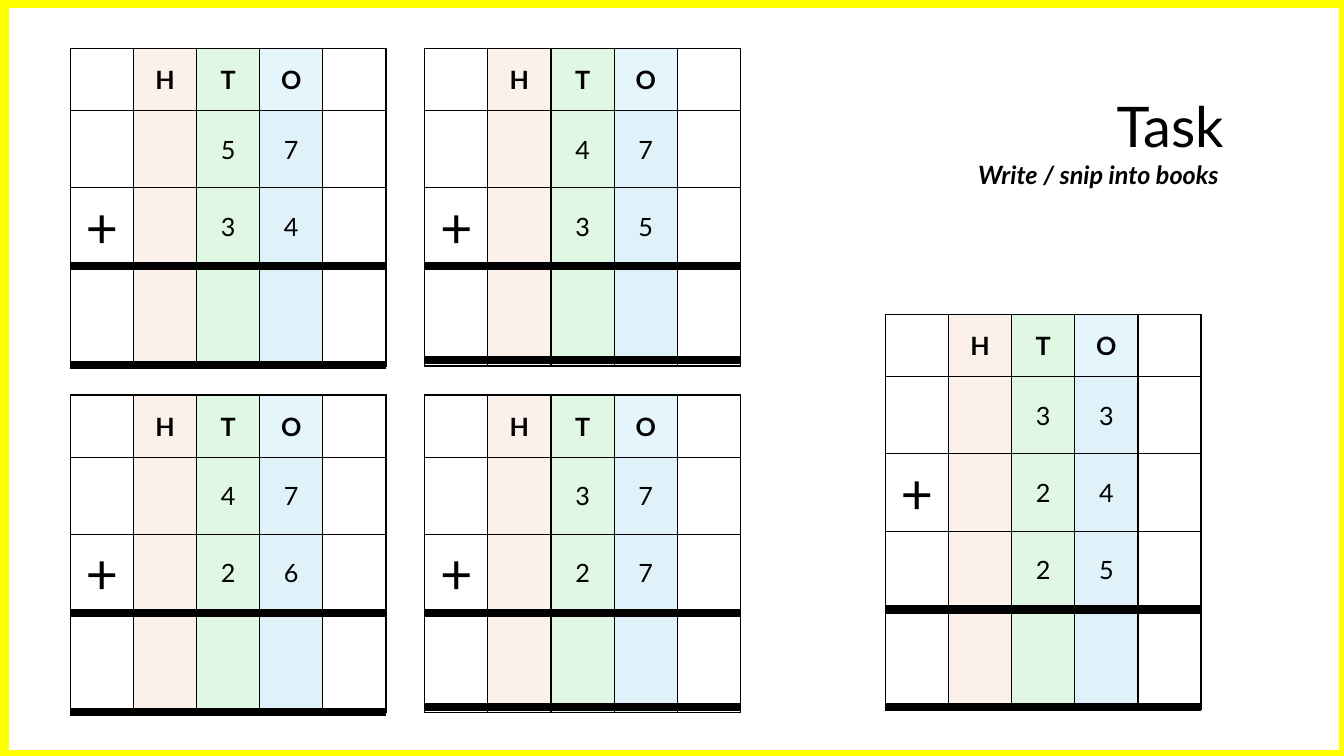
from dataclasses import dataclass

from lxml.etree import SubElement
from pptx import Presentation
from pptx.dml.color import RGBColor
from pptx.enum.shapes import MSO_CONNECTOR, MSO_SHAPE
from pptx.enum.text import MSO_ANCHOR, MSO_AUTO_SIZE, PP_ALIGN
from pptx.oxml.ns import qn
from pptx.util import Pt


@dataclass(frozen=True)
class Theme:
    """Colours, font and type sizes of the slide."""
    font: str = "Lato"
    ink: str = "000000"
    frame: str = "FFFF00"
    hundreds: str = "FBE3D6"
    tens: str = "C2F1C8"
    ones_header: str = "CAEEFB"
    ones: str = "C1E5F5"
    tint_alpha: int = 50000
    large: int = 40
    body: int = 18


THEME = Theme()
COLUMN_WIDTH = 45.1
HEADER_HEIGHT, FIRST_HEIGHT, ADDEND_HEIGHT, ANSWER_HEIGHT = 44.6, 55, 55.2, 72
RULE_DROP = 0.8

SUMS = [
    (50.2, 34.6, ["57", "34"], 70.6),
    (303.4, 34.6, ["47", "35"], 67),
    (632.4, 224.6, ["33", "24", "25"], 69.8),
    (50.2, 282.2, ["47", "26"], 70.6),
    (303.4, 282.2, ["37", "27"], 67.4),
]


def write(frame, text, size=THEME.body, bold=False, italic=False, align=PP_ALIGN.CENTER):
    """Put one formatted line of text into a text frame."""
    line = frame.paragraphs[0]
    line.alignment = align
    run = line.add_run()
    run.text = text
    run.font.name = THEME.font
    run.font.size = Pt(size)
    run.font.bold = bold
    run.font.italic = italic
    run.font.color.rgb = RGBColor.from_string(THEME.ink)


def add_frame(slide, left, top, width, height):
    """Draw the yellow frame around the slide."""
    frame = slide.shapes.add_shape(
        MSO_SHAPE.RECTANGLE, Pt(left), Pt(top), Pt(width), Pt(height))
    frame.shadow.inherit = False
    frame.fill.background()
    frame.line.color.rgb = RGBColor.from_string(THEME.frame)
    frame.line.width = Pt(10)


def add_heading(slide, left, top, width, height, text, **style):
    """Place one right-aligned heading line."""
    heading = slide.shapes.add_textbox(Pt(left), Pt(top), Pt(width), Pt(height))
    heading.text_frame.word_wrap = False
    heading.text_frame.auto_size = MSO_AUTO_SIZE.SHAPE_TO_FIT_TEXT
    write(heading.text_frame, text, align=PP_ALIGN.RIGHT, **style)


def style_cell(cell, tint):
    """Give a cell thin borders and an optional translucent tint."""
    properties = cell._tc.get_or_add_tcPr()
    for side in ("lnL", "lnR", "lnT", "lnB"):
        border = SubElement(properties, qn(f"a:{side}"), w=str(Pt(1)))
        SubElement(SubElement(border, qn("a:solidFill")), qn("a:srgbClr"), val=THEME.ink)
    cell.vertical_anchor = MSO_ANCHOR.MIDDLE
    if tint is None:
        cell.fill.background()
        return
    cell.fill.solid()
    cell.fill.fore_color.rgb = RGBColor.from_string(tint)
    for colour in properties.findall(f"{qn('a:solidFill')}/{qn('a:srgbClr')}"):
        SubElement(colour, qn("a:alpha"), val=str(THEME.tint_alpha))


def add_rule(slide, left, top, width):
    """Draw a thick horizontal rule."""
    rule = slide.shapes.add_connector(
        MSO_CONNECTOR.STRAIGHT, Pt(left), Pt(top), Pt(left + width), Pt(top))
    rule.line.color.rgb = RGBColor.from_string(THEME.ink)
    rule.line.width = Pt(6)
    SubElement(rule._element.spPr, qn("a:effectLst"))


def add_sum(slide, left, top, addends, answer_gap):
    """Build a column addition grid with rules around its answer row."""
    heights = [HEADER_HEIGHT, FIRST_HEIGHT]
    heights += [ADDEND_HEIGHT] * (len(addends) - 1) + [ANSWER_HEIGHT]
    rows = [["", "H", "T", "O", ""]]
    rows += [["", "", *addend, ""] for addend in addends]
    rows.append([""] * 5)
    rows[2][0] = "+"

    width = 5 * COLUMN_WIDTH
    grid = slide.shapes.add_table(
        len(rows), 5, Pt(left), Pt(top), Pt(width), Pt(sum(heights))).table
    grid.first_row = grid.horz_banding = False
    for column in grid.columns:
        column.width = Pt(COLUMN_WIDTH)
    for row_index, (height, row) in enumerate(zip(heights, rows)):
        grid.rows[row_index].height = Pt(height)
        header = row_index == 0
        ones = THEME.ones_header if header else THEME.ones
        tints = [None, THEME.hundreds, THEME.tens, ones, None]
        for column_index, (entry, tint) in enumerate(zip(row, tints)):
            cell = grid.cell(row_index, column_index)
            style_cell(cell, tint)
            if entry:
                size = THEME.large if entry == "+" else THEME.body
                write(cell.text_frame, entry, size=size, bold=header)

    sum_rule = top + sum(heights[:-1]) + RULE_DROP
    for rule_top in (sum_rule, sum_rule + answer_gap):
        add_rule(slide, left, rule_top, width)


def main():
    """Build and save the task slide."""
    deck = Presentation()
    deck.slide_width, deck.slide_height = Pt(960), Pt(540)
    slide = deck.slides.add_slide(deck.slide_layouts[6])
    add_heading(slide, 789.8, 62, 91.4, 55.4, "Task", size=THEME.large)
    add_heading(slide, 679, 110.2, 198.7, 29, "Write / snip into books",
                bold=True, italic=True)
    add_frame(slide, 1.4, 0.8, 960, 540)
    for problem in SUMS:
        add_sum(slide, *problem)
    deck.save("out.pptx")


if __name__ == "__main__":
    main()
